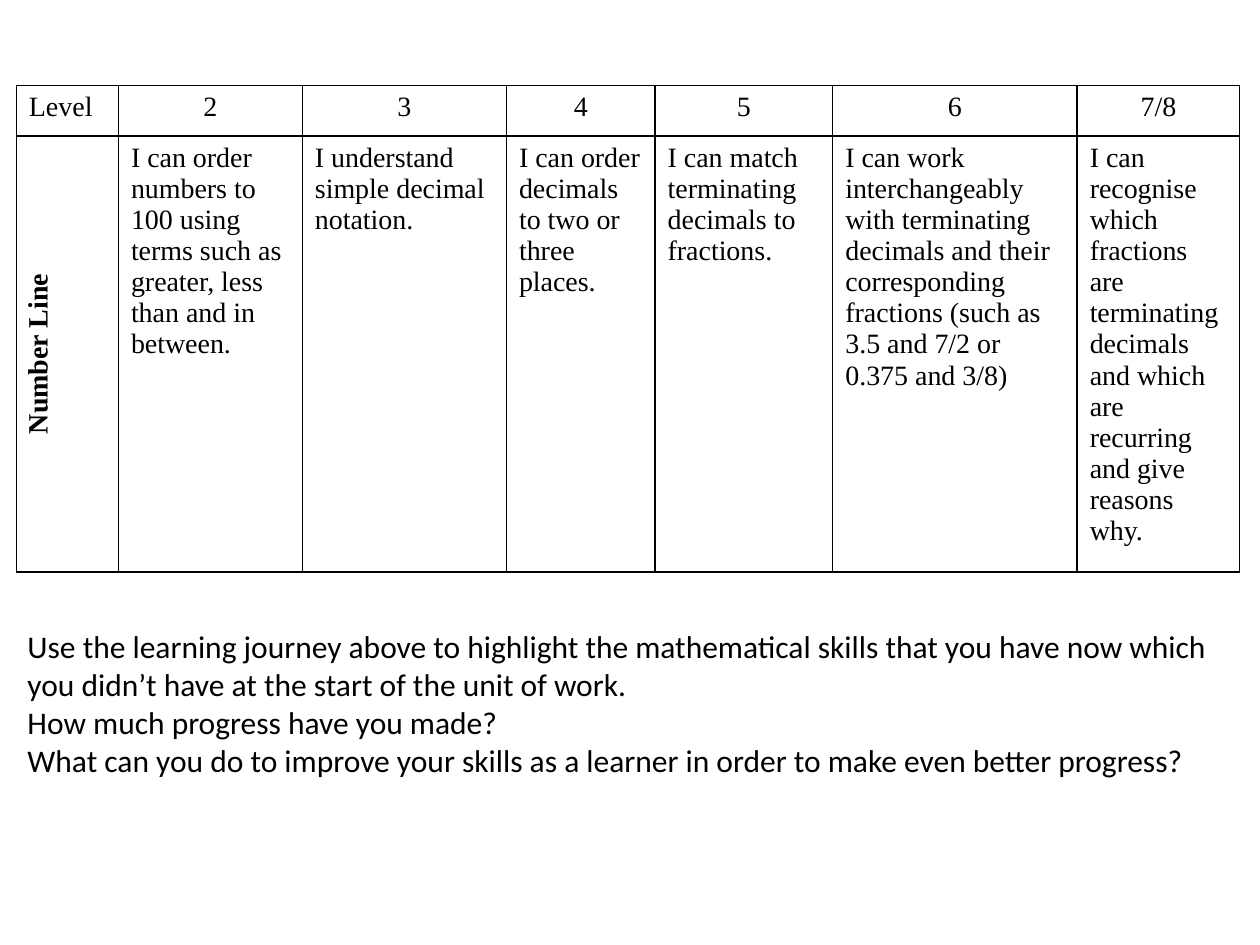
"""Build a number line learning journey slide with a level table and reflection questions."""
from lxml import etree
from pptx import Presentation
from pptx import util as u
from pptx.dml import color
from pptx.enum import text
from pptx.oxml import ns


def rgb(value):
    return color.RGBColor.from_string(value)


def write(frame, content, size=16, font="Times New Roman", ink="000000", bold=False, align=text.PP_ALIGN.LEFT):
    frame.word_wrap = True
    for index, line in enumerate(content.split("\n")):
        paragraph = frame.paragraphs[0] if index == 0 else frame.add_paragraph()
        paragraph.alignment = align
        run = paragraph.add_run()
        run.text = line
        run.font.size = u.Pt(size)
        run.font.name = font
        run.font.bold = bold
        run.font.color.rgb = rgb(ink)


presentation = Presentation()
presentation.slide_width = u.Inches(10)
presentation.slide_height = u.Inches(7.5)
slide = presentation.slides.add_slide(presentation.slide_layouts[6])

widths = [0.81, 1.46, 1.62, 1.18, 1.41, 1.94, 1.29]
heights = [0.4, 3.46]
levels = ["Level", "2", "3", "4", "5", "6", "7/8"]
skills = [
    "Number Line",
    "I can order numbers to 100 using terms such as greater, less than and in between.",
    "I understand simple decimal notation.",
    "I can order decimals to two or three places.",
    "I can match terminating decimals to fractions.",
    "I can work interchangeably with terminating decimals and their corresponding fractions "
    "(such as 3.5 and 7/2 or 0.375 and 3/8)",
    "I can recognise which fractions are terminating decimals and which are recurring and give reasons why.",
]

journey = slide.shapes.add_table(
    len(heights), len(widths), u.Inches(0.13), u.Inches(0.68), u.Inches(sum(widths)), u.Inches(sum(heights))
).table
journey.first_row = False
journey.horz_banding = False
for column, width in zip(journey.columns, widths):
    column.width = u.Inches(width)
for row, height in zip(journey.rows, heights):
    row.height = u.Inches(height)

for row_index, entries in enumerate([levels, skills]):
    for column_index, entry in enumerate(entries):
        cell = journey.cell(row_index, column_index)
        is_topic = entry == "Number Line"
        is_centred = is_topic or (row_index == 0 and column_index > 0)
        write(
            cell.text_frame,
            entry,
            bold=is_topic,
            align=text.PP_ALIGN.CENTER if is_centred else text.PP_ALIGN.LEFT,
        )
        properties = cell._tc.get_or_add_tcPr()
        if is_topic:
            properties.set("vert", "vert270")
        for side in ("lnL", "lnR", "lnT", "lnB"):
            border = etree.SubElement(properties, ns.qn(f"a:{side}"), w=str(u.Pt(1)))
            ink = etree.SubElement(border, ns.qn("a:solidFill"))
            etree.SubElement(ink, ns.qn("a:srgbClr"), val="000000")
        cell.fill.background()

reflection = slide.shapes.add_textbox(u.Inches(0.12), u.Inches(4.93), u.Inches(9.76), u.Inches(1.62)).text_frame
write(
    reflection,
    "Use the learning journey above to highlight the mathematical skills that you have now which "
    "you didn’t have at the start of the unit of work.\n"
    "How much progress have you made?\n"
    "What can you do to improve your skills as a learner in order to make even better progress?",
    size=18,
    font="Calibri",
)

presentation.save("out.pptx")
